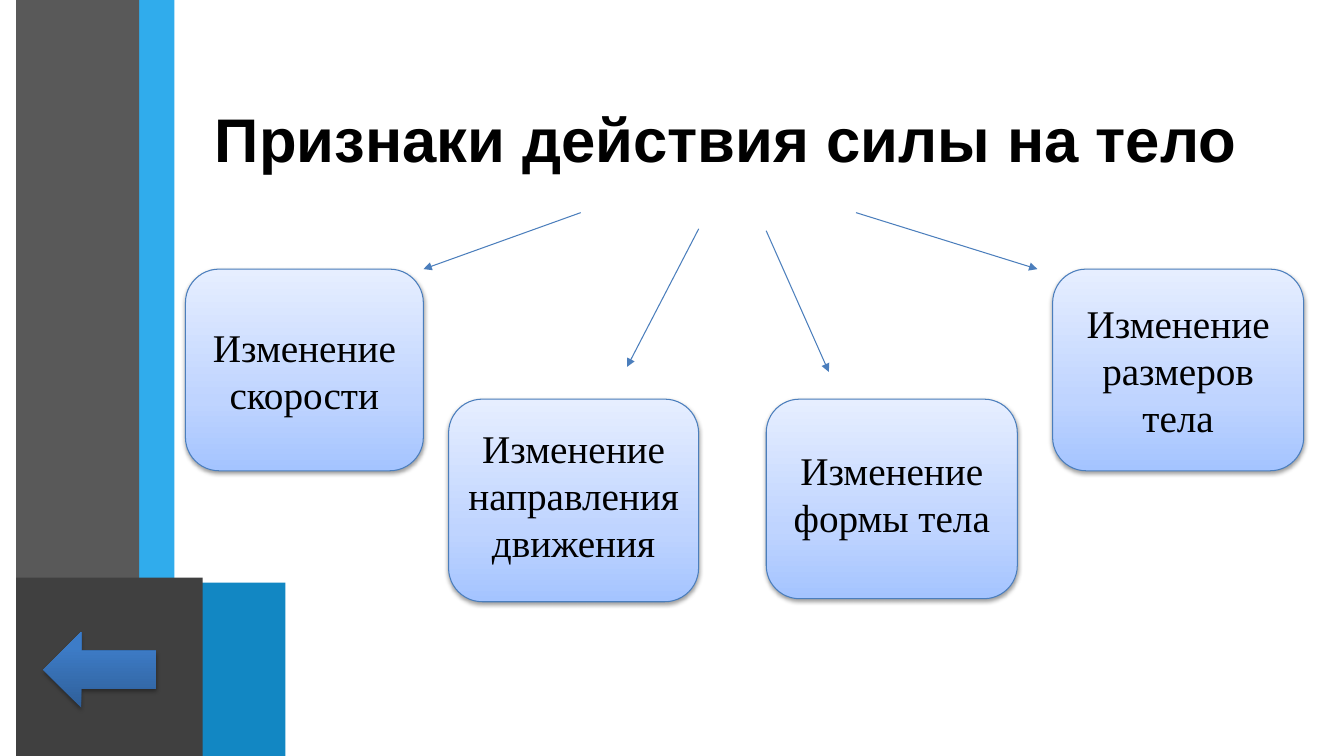
from dataclasses import dataclass

from lxml.etree import SubElement
from pptx import Presentation
from pptx.dml.color import RGBColor
from pptx.enum.shapes import MSO_CONNECTOR, MSO_SHAPE
from pptx.enum.text import MSO_ANCHOR, PP_ALIGN
from pptx.oxml.ns import qn
from pptx.shapes.autoshape import Shape
from pptx.shapes.connector import Connector
from pptx.slide import Slide
from pptx.text.text import TextFrame
from pptx.util import Inches, Pt

SLIDE_W, SLIDE_H = Inches(13.33), Inches(7.5)
COL, ROW = SLIDE_W / 100, SLIDE_H / 100

Gradient = tuple[tuple[int, str], ...]


@dataclass(frozen=True)
class Theme:
    sky: str = "30ACEC"
    blue: str = "1287C3"
    grey: str = "595959"
    dark: str = "404040"
    text: str = "000000"
    line: str = "4B7EBC"
    card: Gradient = ((0, "A4C4FF"), (35, "BFD4FF"), (100, "E6EEFF"))
    back: Gradient = ((0, "2F5F99"), (80, "3D7CC7"), (100, "3A7CCB"))
    title_font: str = "Arial"
    card_font: str = "Times New Roman"
    title_size: float = 44
    card_size: float = 28
    line_width: float = 0.75


@dataclass(frozen=True)
class Box:
    col: float
    row: float
    cols: float
    rows: float

    def emu(self) -> tuple[int, int, int, int]:
        return (round(self.col * COL), round(self.row * ROW),
                round(self.cols * COL), round(self.rows * ROW))


@dataclass(frozen=True)
class Band:
    box: Box
    color: str


@dataclass(frozen=True)
class Card:
    text: str
    box: Box
    lift: float = 0


@dataclass(frozen=True)
class Arrow:
    col: float
    row: float
    end_col: float
    end_row: float


THEME = Theme()

BANDS = (
    Band(Box(3.75, 0, 9.23, 77.73), THEME.sky),
    Band(Box(1.2, 0, 9.15, 76.93), THEME.grey),
    Band(Box(3.75, 77.07, 17.48, 22.93), THEME.blue),
    Band(Box(1.2, 76.4, 13.88, 23.6), THEME.dark),
)
TITLE = "Признаки действия силы на тело"
TITLE_BOX = Box(15.98, 11.73, 78.69, 14.27)
BACK_BOX = Box(3.23, 83.6, 8.4, 10)
UPPER, LOWER = 35.6, 52.8
CARDS = (
    Card("Изменение скорости", Box(13.8, UPPER, 17.7, 26.67)),
    Card("Изменение направления движения", Box(33.38, LOWER, 18.6, 26.8), 1.5),
    Card("Изменение формы тела", Box(57.01, LOWER, 18.68, 26.4), 1.5),
    Card("Изменение размеров тела", Box(78.32, UPPER, 18.68, 26.67)),
)
ARROWS = (
    Arrow(43.21, 28.13, 31.51, UPPER),
    Arrow(63.69, 28.13, 77.19, UPPER),
    Arrow(51.99, 30.27, 46.66, 48.53),
    Arrow(57.01, 30.53, 61.67, 49.2),
)


def add_plain(s: Slide, kind: MSO_SHAPE, box: Box) -> Shape:
    sp = s.shapes.add_shape(kind, *box.emu())
    sp.shadow.inherit = False
    sp.line.fill.background()
    return sp


def add_band(s: Slide, band: Band) -> None:
    sp = add_plain(s, MSO_SHAPE.RECTANGLE, band.box)
    sp.fill.solid()
    sp.fill.fore_color.rgb = RGBColor.from_string(band.color)


def add_color(parent, color: str):
    clr = SubElement(parent, qn("a:srgbClr"))
    clr.set("val", color)
    return clr


def add_raised(s: Slide, kind: MSO_SHAPE, box: Box, stops: Gradient,
               alpha: int, dist: float) -> Shape:
    sp = add_plain(s, kind, box)
    spPr = sp._element.spPr
    grad = SubElement(spPr, qn("a:gradFill"))
    gs_lst = SubElement(grad, qn("a:gsLst"))
    for pos, color in stops:
        gs = SubElement(gs_lst, qn("a:gs"))
        gs.set("pos", str(pos * 1000))
        add_color(gs, color)
    SubElement(grad, qn("a:lin")).set("ang", str(270 * 60000))
    spPr.find(qn("a:prstGeom")).addnext(grad)

    shadow = SubElement(spPr.find(qn("a:effectLst")), qn("a:outerShdw"))
    shadow.set("blurRad", str(Pt(3.1)))
    shadow.set("dist", str(Pt(dist)))
    shadow.set("dir", str(90 * 60000))
    shadow.set("rotWithShape", "0")
    clr = add_color(shadow, "000000")
    SubElement(clr, qn("a:alpha")).set("val", str(alpha * 1000))
    return sp


def add_text(tf: TextFrame, text: str, font: str, size: float,
             align: PP_ALIGN, bold: bool = False) -> None:
    tf.vertical_anchor = MSO_ANCHOR.MIDDLE
    tf.margin_top = tf.margin_bottom = 0
    p = tf.paragraphs[0]
    p.alignment = align
    r = p.add_run()
    r.text = text
    r.font.name = font
    r.font.size = Pt(size)
    r.font.bold = bold
    r.font.color.rgb = RGBColor.from_string(THEME.text)


def add_title(s: Slide) -> None:
    tf = s.shapes.add_textbox(*TITLE_BOX.emu()).text_frame
    tf.word_wrap = True
    tf.margin_left = tf.margin_right = 0
    add_text(tf, TITLE, THEME.title_font, THEME.title_size, PP_ALIGN.LEFT, True)
    tf.paragraphs[0].line_spacing = 0.9


def set_line(sp: Shape | Connector) -> None:
    sp.line.color.rgb = RGBColor.from_string(THEME.line)
    sp.line.width = Pt(THEME.line_width)


def add_card(s: Slide, card: Card) -> None:
    sp = add_raised(s, MSO_SHAPE.ROUNDED_RECTANGLE, card.box, THEME.card, 38, 1.6)
    set_line(sp)
    tf = sp.text_frame
    tf.word_wrap = True
    tf.margin_left = tf.margin_right = Inches(0.05)
    add_text(tf, card.text, THEME.card_font, THEME.card_size, PP_ALIGN.CENTER)
    tf.margin_bottom = round(card.lift * ROW)


def add_arrow(s: Slide, arrow: Arrow) -> None:
    cx = s.shapes.add_connector(
        MSO_CONNECTOR.STRAIGHT,
        round(arrow.col * COL), round(arrow.row * ROW),
        round(arrow.end_col * COL), round(arrow.end_row * ROW))
    set_line(cx)
    SubElement(cx.line._get_or_add_ln(), qn("a:tailEnd")).set("type", "triangle")
    SubElement(cx._element.spPr, qn("a:effectLst"))


def main() -> None:
    prs = Presentation()
    prs.slide_width, prs.slide_height = SLIDE_W, SLIDE_H
    s = prs.slides.add_slide(prs.slide_layouts[6])
    for band in BANDS:
        add_band(s, band)
    add_title(s)
    add_raised(s, MSO_SHAPE.LEFT_ARROW, BACK_BOX, THEME.back, 35, 1.8)
    for card in CARDS:
        add_card(s, card)
    for arrow in ARROWS:
        add_arrow(s, arrow)
    prs.save("out.pptx")


if __name__ == "__main__":
    main()
